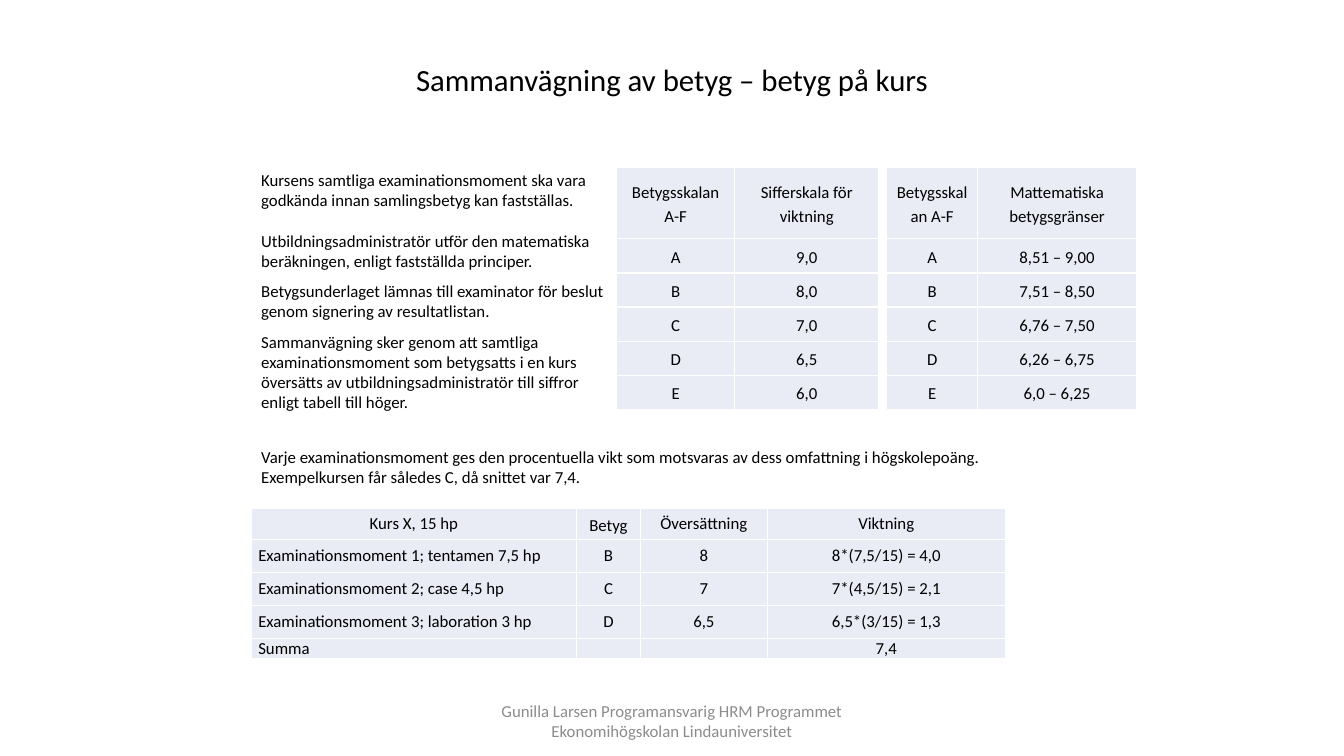
from dataclasses import dataclass
from typing import Any

from lxml import etree
from pptx import Presentation
from pptx.dml.color import RGBColor
from pptx.enum import text as txt
from pptx.oxml import ns
from pptx.util import Pt

LEFT, CENTER = txt.PP_ALIGN.LEFT, txt.PP_ALIGN.CENTER


def color(hex_code):
    return RGBColor.from_string(hex_code)


def write(frame, content, size=12, ink="000000", font="Calibri", align=LEFT,
          spacing=None, before=0, after=0):
    """Fill a text frame with one paragraph per line; after may be a list."""
    frame.word_wrap = True
    frame.vertical_anchor = txt.MSO_ANCHOR.MIDDLE
    lines = content.split("\n")
    gaps = after if isinstance(after, list) else [after] * len(lines)
    for index, (line, gap) in enumerate(zip(lines, gaps)):
        paragraph = frame.add_paragraph() if index else frame.paragraphs[0]
        paragraph.alignment = align
        paragraph.line_spacing = spacing
        paragraph.space_before, paragraph.space_after = Pt(before), Pt(gap)
        if line:
            run = paragraph.add_run()
            run.text = line
            run.font.size, run.font.name = Pt(size), font
            run.font.color.rgb = color(ink)
        else:
            etree.SubElement(paragraph._p, ns.qn("a:endParaRPr"), sz=str(size * 100))


def outline_cell(cell, ink, width):
    properties = cell._tc.get_or_add_tcPr()
    for position, side in enumerate(("lnL", "lnR", "lnT", "lnB")):
        line = etree.Element(ns.qn(f"a:{side}"), w=str(Pt(width)))
        fill = etree.SubElement(line, ns.qn("a:solidFill"))
        etree.SubElement(fill, ns.qn("a:srgbClr"), val=ink)
        properties.insert(position, line)


@dataclass
class GradingSlide:
    slide: Any
    cell_fill: str = "E9EBF5"
    border: str = "FFFFFF"
    muted: str = "8C8C8C"

    def title(self, content, left, top, width, height):
        heading = self.slide.shapes.title
        heading.left, heading.top = Pt(left), Pt(top)
        heading.width, heading.height = Pt(width), Pt(height)
        heading.text_frame.auto_size = txt.MSO_AUTO_SIZE.NONE
        write(heading.text_frame, content, size=22, align=CENTER, spacing=0.9)

    def text(self, content, left, top, width, height, **style):
        box = self.slide.shapes.add_textbox(Pt(left), Pt(top), Pt(width), Pt(height))
        write(box.text_frame, content, **style)

    def table(self, rows, left, top, widths, heights, spacing=None, first_align=CENTER):
        """Add a table; first_align applies to the first column below its header."""
        grid = self.slide.shapes.add_table(
            len(rows), len(widths), Pt(left), Pt(top),
            Pt(sum(widths)), Pt(sum(heights))).table
        grid.first_row = grid.horz_banding = False
        for column, width in zip(grid.columns, widths):
            column.width = Pt(width)
        for r, (values, height) in enumerate(zip(rows, heights)):
            grid.rows[r].height = Pt(height)
            for c, value in enumerate(values):
                cell = grid.cell(r, c)
                cell.margin_left = cell.margin_right = Pt(5)
                cell.margin_top = cell.margin_bottom = 0
                cell.fill.solid()
                cell.fill.fore_color.rgb = color(self.cell_fill)
                outline_cell(cell, self.border, 1)
                align = first_align if r and not c else CENTER
                write(cell.text_frame, value, align=align, spacing=spacing,
                      before=3, after=3)
                cell.vertical_anchor = txt.MSO_ANCHOR.MIDDLE
        return grid


def main():
    deck = Presentation()
    deck.slide_width, deck.slide_height = Pt(960), Pt(540)
    page = GradingSlide(deck.slides.add_slide(deck.slide_layouts[5]))
    left = 179.5

    page.title("Sammanvägning av betyg – betyg på kurs", 0, 40, 960, 36)

    grades = "ABCDE"
    weights = ["9,0", "8,0", "7,0", "6,5", "6,0"]
    limits = ["8,51 – 9,00", "7,51 – 8,50", "6,76 – 7,50", "6,26 – 6,75", "6,0 – 6,25"]
    scale_heights = [50.8] + [24.4] * 5
    for header, values, x, widths in (
            ("Sifferskala för viktning", weights, 440.5, [84.3, 103]),
            ("Mattematiska betygsgränser", limits, 633.2, [65.3, 113.2])):
        page.table([("Betygsskalan A-F", header), *zip(grades, values)],
                   x, 119.8, widths, scale_heights, spacing=1.15)

    page.text(
        "Kursens samtliga examinationsmoment ska vara godkända innan samlingsbetyg "
        "kan fastställas.\n"
        "Utbildningsadministratör utför den matematiska beräkningen, enligt "
        "fastställda principer.\n"
        "Betygsunderlaget lämnas till examinator för beslut genom signering av "
        "resultatlistan.\n"
        "Sammanvägning sker genom att samtliga examinationsmoment som betygsatts "
        "i en kurs översätts av utbildningsadministratör till siffror enligt tabell "
        "till höger.",
        left, 117, 260.5, 181.5, after=[14.6, 7.3, 7.3, 0])

    course = page.table(
        [("Kurs X, 15 hp", "Betyg", "Översättning", "Viktning"),
         ("Examinationsmoment 1; tentamen 7,5 hp", "B", "8", "8*(7,5/15) = 4,0"),
         ("Examinationsmoment 2; case 4,5 hp", "C", "7", "7*(4,5/15) = 2,1"),
         ("Examinationsmoment 3; laboration 3 hp", "D", "6,5", "6,5*(3/15) = 1,3"),
         ("Summa", "", "", "7,4")],
        left, 363.2, [232.4, 45.6, 90.7, 169.9], [22.2, 23.6, 23.6, 23.6, 14],
        first_align=LEFT)
    course.cell(0, 1).text_frame.paragraphs[0].line_spacing = 1.15

    page.text(
        "Varje examinationsmoment ges den procentuella vikt som motsvaras av dess "
        "omfattning i högskolepoäng. Exempelkursen får således C, då snittet var 7,4.",
        left, 315.5, 538.5, 36)
    page.text("Gunilla Larsen Programansvarig HRM Programmet Ekonomihögskolan "
              "Lindauniversitet",
              318, 500.5, 324, 29, ink=page.muted, align=CENTER)

    deck.save("out.pptx")


if __name__ == "__main__":
    main()
